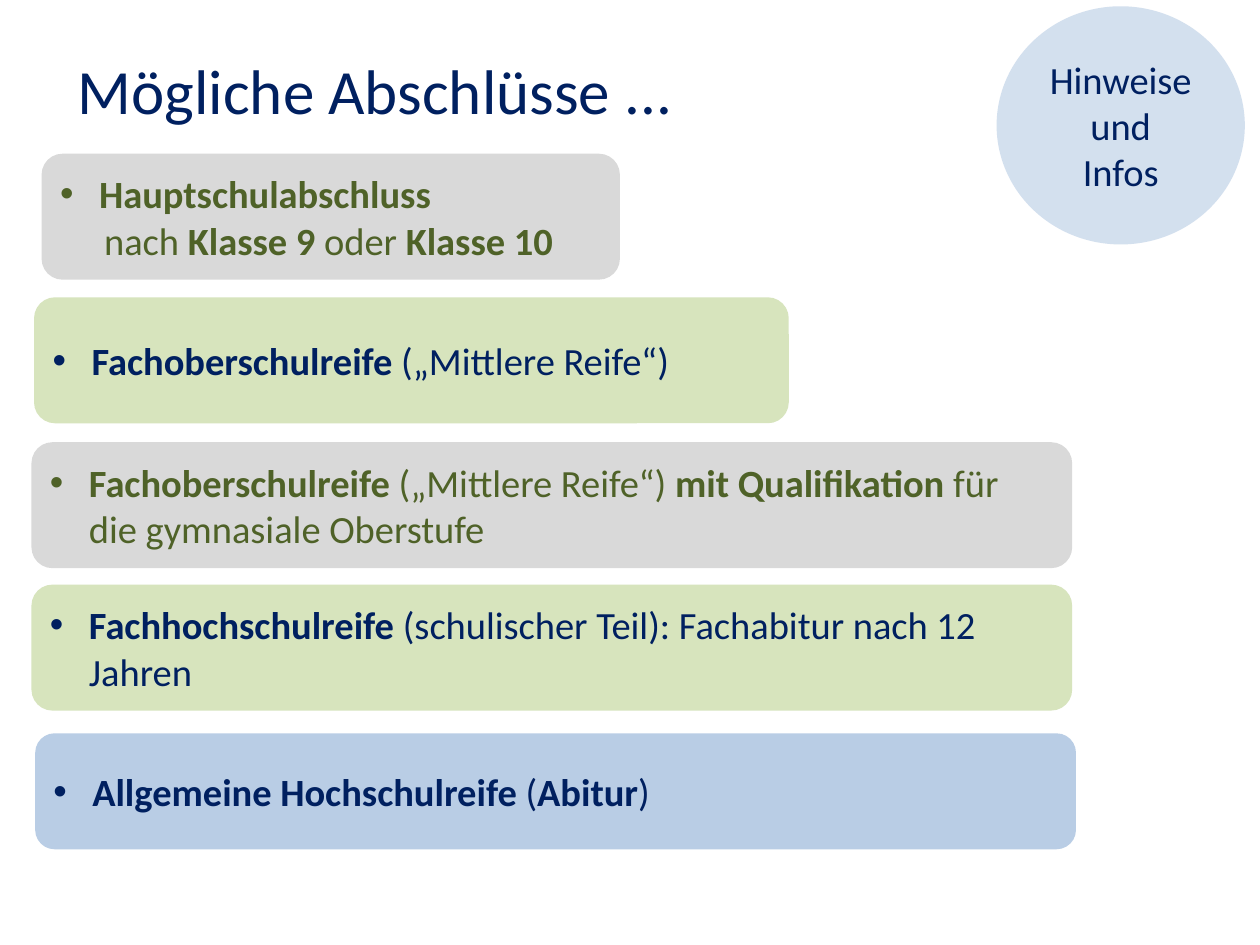
from lxml.etree import SubElement
from pptx import Presentation
from pptx.dml.color import RGBColor
from pptx.enum.shapes import MSO_SHAPE as Shape
from pptx.enum.text import MSO_ANCHOR as Anchor, PP_ALIGN as Align
from pptx.oxml.ns import qn
from pptx.util import Inches, Pt

NAVY = RGBColor(0x00, 0x20, 0x60)
OLIVE = RGBColor(0x4F, 0x62, 0x28)
GREEN = RGBColor(0xD7, 0xE4, 0xBD)
GREY = RGBColor(0xD9, 0xD9, 0xD9)
BLUE = RGBColor(0xB9, 0xCD, 0xE5)

BULLET_INDENT = 0.31
CONTINUATION_INDENT = 0.35

DEGREES = [
    ((0.33, 1.22, 4.59, 1), GREY, OLIVE, 0, [
        [("Hauptschulabschluss", True)],
        [("nach ", False), ("Klasse 9 ", True), ("oder ", False), ("Klasse 10", True)],
    ]),
    ((0.27, 2.36, 5.99, 1), GREEN, NAVY, 0, [
        [("Fachoberschulreife", True), (" („Mittlere Reife“)", False)],
    ]),
    ((0.25, 3.51, 8.26, 1), GREY, OLIVE, 10, [
        [("Fachoberschulreife", True), (" („Mittlere Reife“) ", False),
         ("mit Qualifikation ", True), ("für die gymnasiale Oberstufe", False)],
    ]),
    ((0.25, 4.64, 8.26, 1), GREEN, NAVY, 10, [
        [("Fachhochschulreife", True),
         (" (schulischer Teil): Fachabitur nach 12 Jahren", False)],
    ]),
    ((0.28, 5.82, 8.26, 0.92), BLUE, NAVY, 10, [
        [("Allgemeine Hochschulreife ", True), ("(", False), ("Abitur", True), (")", False)],
    ]),
]


def style_font(paragraph, size, color):
    """Set the font shared by all runs of a paragraph."""
    paragraph.font.name = "Calibri"
    paragraph.font.size = Pt(size)
    paragraph.font.color.rgb = color


def indent(paragraph, left, bulleted):
    """Indent a paragraph, hanging it from a bullet if asked."""
    properties = paragraph._p.get_or_add_pPr()
    properties.set("marL", str(Inches(left)))
    properties.set("indent", str(-Inches(left) if bulleted else 0))
    if bulleted:
        SubElement(properties, qn("a:buFont"), typeface="Arial")
        SubElement(properties, qn("a:buChar"), char="•")


def add_panel(slide, kind, box, fill):
    """Add a filled, borderless shape with vertically centred text."""
    panel = slide.shapes.add_shape(kind, *map(Inches, box))
    panel.shadow.inherit = False
    panel.fill.solid()
    panel.fill.fore_color.rgb = fill
    panel.line.fill.background()
    panel.text_frame.word_wrap = True
    panel.text_frame.vertical_anchor = Anchor.MIDDLE
    return panel


def add_title(slide, box):
    """Place the slide heading."""
    frame = slide.shapes.add_textbox(*map(Inches, box)).text_frame
    frame.word_wrap = False
    heading = frame.paragraphs[0]
    heading.text = "Mögliche Abschlüsse ..."
    style_font(heading, 36, NAVY)


def add_info_badge(slide, box):
    """Place the translucent round badge."""
    badge = add_panel(slide, Shape.FLOWCHART_CONNECTOR, box, BLUE)
    color = badge.fill._xPr.find(qn("a:solidFill"))[0]
    SubElement(color, qn("a:alpha"), val="62000")
    badge.text_frame.text = "Hinweise und\nInfos"
    for line in badge.text_frame.paragraphs:
        line.alignment = Align.CENTER
        style_font(line, 22, NAVY)


def add_degree(slide, box, fill, color, space_after, lines):
    """Place one school-leaving qualification in its rounded bar."""
    frame = add_panel(slide, Shape.ROUNDED_RECTANGLE, box, fill).text_frame
    for number, parts in enumerate(lines):
        first = number == 0
        line = frame.paragraphs[0] if first else frame.add_paragraph()
        indent(line, BULLET_INDENT if first else CONTINUATION_INDENT, first)
        line.alignment = Align.LEFT
        line.space_after = Pt(space_after)
        style_font(line, 22, color)
        for text, bold in parts:
            run = line.add_run()
            run.text = text
            run.font.bold = bold


def main():
    """Build and save the slide."""
    deck = Presentation()
    deck.slide_width, deck.slide_height = Inches(10), Inches(7.5)
    slide = deck.slides.add_slide(deck.slide_layouts[6])
    add_title(slide, (0.52, 0.36, 4.97, 0.71))
    add_info_badge(slide, (7.91, 0.05, 1.97, 1.89))
    for degree in DEGREES:
        add_degree(slide, *degree)
    deck.save("out.pptx")


if __name__ == "__main__":
    main()
